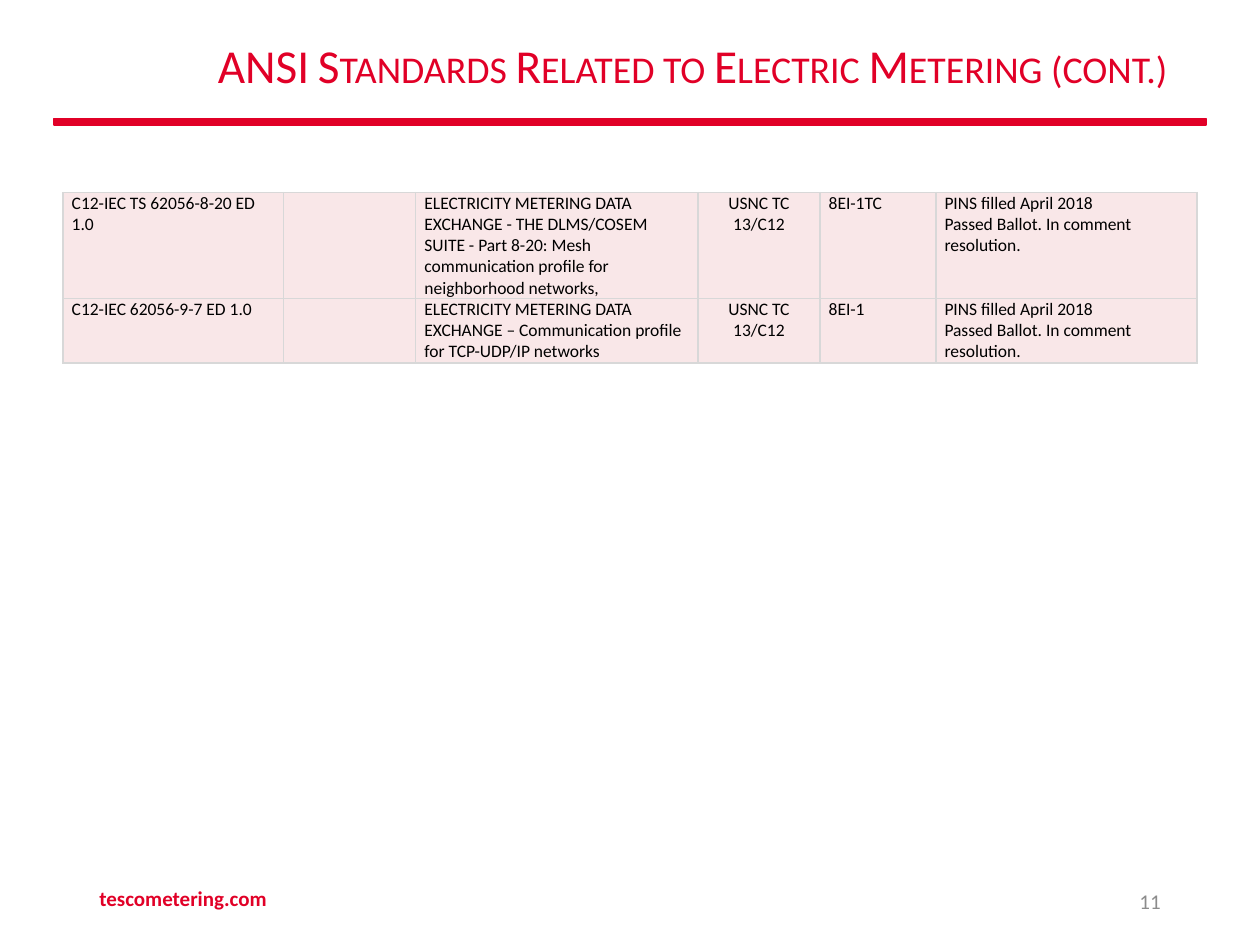
from dataclasses import dataclass

from lxml import etree
from pptx import Presentation
from pptx.dml.color import RGBColor
from pptx.enum.shapes import MSO_SHAPE
from pptx.enum.text import MSO_ANCHOR, PP_ALIGN
from pptx.oxml.ns import qn
from pptx.util import Pt

LEFT, MID, RIGHT = PP_ALIGN.LEFT, PP_ALIGN.CENTER, PP_ALIGN.RIGHT
MIDDLE = MSO_ANCHOR.MIDDLE
RECT = MSO_SHAPE.RECTANGLE
FONT = "Calibri"
COLORS = {
    "red": "E10027",
    "gray": "8C8C8C",
    "black": "000000",
    "pink": "F9E7E8",
    "edge": "D8D8D8",
}
WIDTHS = (126, 75.6, 161.2, 69.8, 66.2, 149.2)
HEIGHTS = (60.6, 36.6)
STATUS = "PINS filled April 2018\nPassed Ballot. In comment resolution."


@dataclass
class Label:
    text: str
    left: float
    top: float
    width: float
    height: float
    size: float
    color: str
    align: PP_ALIGN = LEFT
    bold: bool = False
    caps: bool = False
    space: float = 1.0


@dataclass
class Entry:
    code: str
    scope: str
    group: str
    status: str = STATUS
    body: str = "USNC TC 13/C12"

    def cells(self) -> tuple:
        return self.code, "", self.scope, self.body, self.group, self.status


LABELS = (
    Label("ANSI Standards Related to Electric Metering (cont.)",
          117.4, 12.2, 603.4, 53.3, 27, "red", caps=True, space=0.9),
    Label("tescometering.com", 49.7, 499, 243.4, 28.8, 12, "red", bold=True),
    Label("11", 508.3, 500.4, 162, 28.8, 12, "gray", RIGHT),
)
ENTRIES = (
    Entry("C12-IEC TS 62056-8-20 ED 1.0",
          "ELECTRICITY METERING DATA EXCHANGE - THE DLMS/COSEM SUITE - "
          "Part 8-20: Mesh communication profile for neighborhood networks,",
          "8EI-1TC"),
    Entry("C12-IEC 62056-9-7 ED 1.0",
          "ELECTRICITY METERING DATA EXCHANGE – Communication profile "
          "for TCP-UDP/IP networks",
          "8EI-1"),
)


def paint(name: str) -> RGBColor:
    return RGBColor.from_string(COLORS[name])


def style(frame, size: float, color: str, align: PP_ALIGN, bold: bool = False) -> None:
    for para in frame.paragraphs:
        para.alignment = align
        for run in para.runs:
            font = run.font
            font.name, font.size, font.bold = FONT, Pt(size), bold
            font.color.rgb = paint(color)


def add_label(slide, label: Label) -> None:
    box = slide.shapes.add_textbox(
        Pt(label.left), Pt(label.top), Pt(label.width), Pt(label.height))
    frame = box.text_frame
    frame.word_wrap = True
    frame.vertical_anchor = MIDDLE
    frame.text = label.text
    style(frame, label.size, label.color, label.align, label.bold)
    para = frame.paragraphs[0]
    para.line_spacing = label.space
    if label.caps:
        para.runs[0].font._element.set("cap", "small")


def add_rule(slide) -> None:
    rule = slide.shapes.add_shape(RECT, Pt(31), Pt(67.7), Pt(658), Pt(3.6))
    rule.shadow.inherit = False
    rule.fill.solid()
    rule.fill.fore_color.rgb = paint("red")
    rule.line.color.rgb = paint("red")
    rule.line.width = Pt(1)


def add_edges(cell) -> None:
    props = cell._tc.get_or_add_tcPr()
    for spot, side in enumerate(("lnL", "lnR", "lnT", "lnB")):
        line = etree.Element(qn(f"a:{side}"), w=str(Pt(1)))
        fill = etree.SubElement(line, qn("a:solidFill"))
        etree.SubElement(fill, qn("a:srgbClr"), val=COLORS["edge"])
        props.insert(spot, line)


def fill_cell(cell, text: str, align: PP_ALIGN) -> None:
    cell.margin_left = cell.margin_right = Pt(5)
    cell.margin_top = cell.margin_bottom = Pt(0)
    cell.fill.solid()
    cell.fill.fore_color.rgb = paint("pink")
    add_edges(cell)
    if text:
        cell.text_frame.text = text
        style(cell.text_frame, 10, "black", align)


def add_grid(slide) -> None:
    table = slide.shapes.add_table(
        len(ENTRIES), len(WIDTHS), Pt(36), Pt(110),
        Pt(sum(WIDTHS)), Pt(sum(HEIGHTS))).table
    table.first_row = table.horz_banding = False
    for col, width in zip(table.columns, WIDTHS):
        col.width = Pt(width)
    for row, height, entry in zip(table.rows, HEIGHTS, ENTRIES):
        row.height = Pt(height)
        for cell, text in zip(row.cells, entry.cells()):
            fill_cell(cell, text, MID if text == entry.body else LEFT)


def main() -> None:
    deck = Presentation()
    deck.slide_width, deck.slide_height = Pt(720), Pt(540)
    slide = deck.slides.add_slide(deck.slide_layouts[6])
    add_rule(slide)
    add_grid(slide)
    for label in LABELS:
        add_label(slide, label)
    deck.save("out.pptx")


if __name__ == "__main__":
    main()
